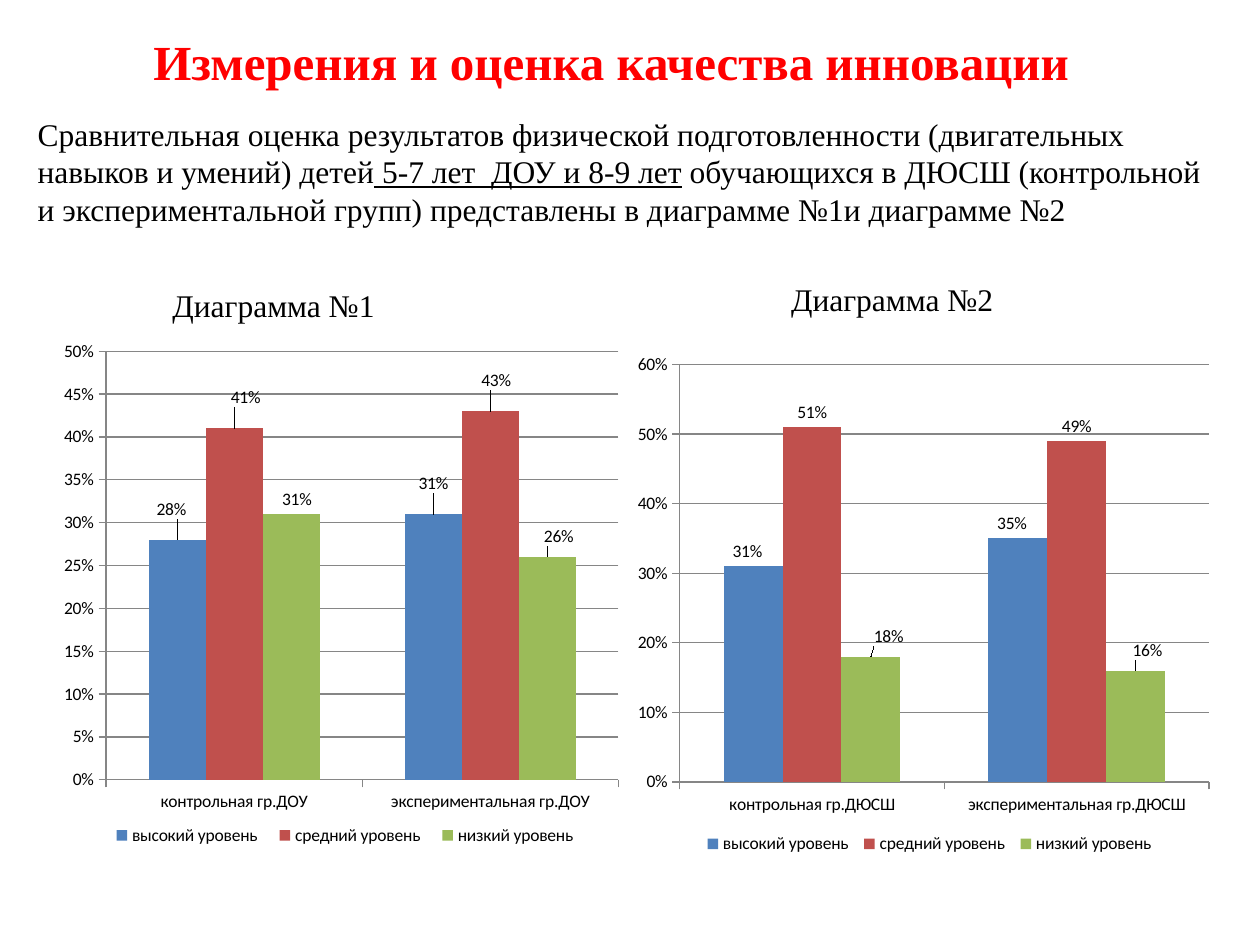
from lxml import etree
from pptx import Presentation
from pptx.chart.data import CategoryChartData
from pptx.dml.color import RGBColor
from pptx.enum.chart import XL_CHART_TYPE, XL_LABEL_POSITION, XL_LEGEND_POSITION, XL_TICK_MARK
from pptx.enum.text import MSO_ANCHOR, PP_ALIGN
from pptx.oxml.ns import qn
from pptx.util import Inches, Pt

COLUMNS = XL_CHART_TYPE.COLUMN_CLUSTERED
ABOVE = XL_LABEL_POSITION.OUTSIDE_END
BOTTOM = XL_LEGEND_POSITION.BOTTOM
OUTSIDE = XL_TICK_MARK.OUTSIDE
MIDDLE, CENTER, LEFT = MSO_ANCHOR.MIDDLE, PP_ALIGN.CENTER, PP_ALIGN.LEFT

COLORS = {
    "title": "FF0000",
    "text": "000000",
    "axis": "868686",
    "высокий уровень": "4F81BD",
    "средний уровень": "C0504D",
    "низкий уровень": "9BBB59",
}
LEVELS = ["высокий уровень", "средний уровень", "низкий уровень"]
PLOT_AREA = {"layoutTarget": "inner", "xMode": "edge", "yMode": "edge",
             "x": 0.09, "y": 0.04, "w": 0.89, "h": 0.81}

prs = Presentation()
prs.slide_width, prs.slide_height = Inches(10), Inches(7.5)
slide = prs.slides.add_slide(prs.slide_layouts[5])


def write(shape, box, runs, size, color, align=LEFT):
    shape.left, shape.top, shape.width, shape.height = map(Inches, box)
    shape.text_frame.word_wrap = True
    paragraph = shape.text_frame.paragraphs[0]
    paragraph.alignment = align
    for wording, underlined in runs:
        run = paragraph.add_run()
        run.text = wording
        if underlined:
            run.font.underline = True
    paragraph.font.name = "Times New Roman"
    paragraph.font.size = Pt(size)
    paragraph.font.color.rgb = RGBColor.from_string(COLORS[color])
    return paragraph


def place(parent, index, settings):
    for old in parent.findall(qn("c:layout")):
        parent.remove(old)
    layout = etree.Element(qn("c:layout"))
    manual = etree.SubElement(layout, qn("c:manualLayout"))
    for key, value in settings.items():
        etree.SubElement(manual, qn(f"c:{key}")).set("val", str(value))
    parent.insert(index, layout)


title = slide.shapes.title
heading = write(title, (0.35, 0.13, 9, 0.71),
                [("Измерения и оценка качества инновации", False)], 28, "title", CENTER)
heading.font.bold = True
title.text_frame.vertical_anchor = MIDDLE

write(slide.shapes.add_textbox(0, 0, 0, 0), (0.2, 0.86, 9.61, 1.01), [
    ("Сравнительная оценка результатов физической подготовленности "
     "(двигательных навыков и умений) детей", False),
    (" 5-7 лет  ДОУ и 8-9 лет", True),
    (" обучающихся в ДЮСШ (контрольной и экспериментальной групп) "
     "представлены в диаграмме №1и диаграмме №2", False),
], 18, "text")

diagrams = [
    {"caption": "Диаграмма №1", "caption_at": (1.27, 2.22), "school": "ДОУ",
     "box": (0.43, 2.62, 4.57, 4.2), "top": 0.5, "step": 0.05,
     "legend": (0.08, 0.92, 0.85, 0.07),
     "values": [(0.28, 0.31), (0.41, 0.43), (0.31, 0.26)],
     "shifts": [[(-0.01, -0.03), (0, -0.03)],
                [(0.02, -0.03), (0.01, -0.03)],
                [(0.01, 0), (0.02, -0.01)]]},
    {"caption": "Диаграмма №2", "caption_at": (6.18, 2.17), "school": "ДЮСШ",
     "box": (4.97, 2.73, 4.72, 4.09), "top": 0.6, "step": 0.1,
     "legend": (0.12, 0.94, 0.78, 0.06),
     "values": [(0.31, 0.35), (0.51, 0.49), (0.18, 0.16)],
     "shifts": [[(-0.01, 0), (-0.01, 0)],
                [(0, 0), (0, 0)],
                [(0.03, -0.01), (0.02, -0.01)]]},
]

for diagram in diagrams:
    results = CategoryChartData(number_format="0%")
    results.categories = [f"{group} гр.{diagram['school']}"
                          for group in ("контрольная", "экспериментальная")]
    for level, values in zip(LEVELS, diagram["values"]):
        results.add_series(level, values)
    chart = slide.shapes.add_chart(COLUMNS, *map(Inches, diagram["box"]), results).chart
    chart.has_title = False
    chart.font.name = "Calibri"
    chart.font.size = Pt(10)
    chart.font.color.rgb = RGBColor.from_string(COLORS["text"])

    chart.has_legend = True
    chart.legend.position = BOTTOM
    chart.legend.include_in_layout = False
    x, y, w, h = diagram["legend"]
    place(chart.legend._element, 1,
          {"xMode": "edge", "yMode": "edge", "x": x, "y": y, "w": w, "h": h})

    plot = chart.plots[0]
    plot.vary_by_categories = False
    plot.gap_width, plot.overlap = 150, 0
    place(plot._element.getparent(), 0, PLOT_AREA)

    percent = chart.value_axis
    percent.minimum_scale, percent.maximum_scale = 0, diagram["top"]
    percent.major_unit = diagram["step"]
    percent.tick_labels.number_format = "0%"
    percent.tick_labels.number_format_is_linked = False
    percent.has_major_gridlines = True
    for axis in (percent, chart.category_axis):
        axis.major_tick_mark = OUTSIDE
    for line in (percent.format.line, percent.major_gridlines.format.line,
                 chart.category_axis.format.line):
        line.color.rgb = RGBColor.from_string(COLORS["axis"])
        line.width = Pt(0.75)

    for series, shifts in zip(plot.series, diagram["shifts"]):
        series.format.fill.solid()
        series.format.fill.fore_color.rgb = RGBColor.from_string(COLORS[series.name])
        labels = series.data_labels
        labels.show_value = True
        labels.number_format = "0%"
        labels.number_format_is_linked = False
        labels.position = ABOVE
        for index, _ in enumerate(shifts):
            series.points[index].data_label.position = ABOVE
        for label, (dx, dy) in zip(series._element.iter(qn("c:dLbl")), shifts):
            place(label, 1, {"x": dx, "y": dy})

    write(slide.shapes.add_textbox(0, 0, 0, 0), (*diagram["caption_at"], 2.02, 0.4),
          [(diagram["caption"], False)], 18, "text")

prs.save("out.pptx")
